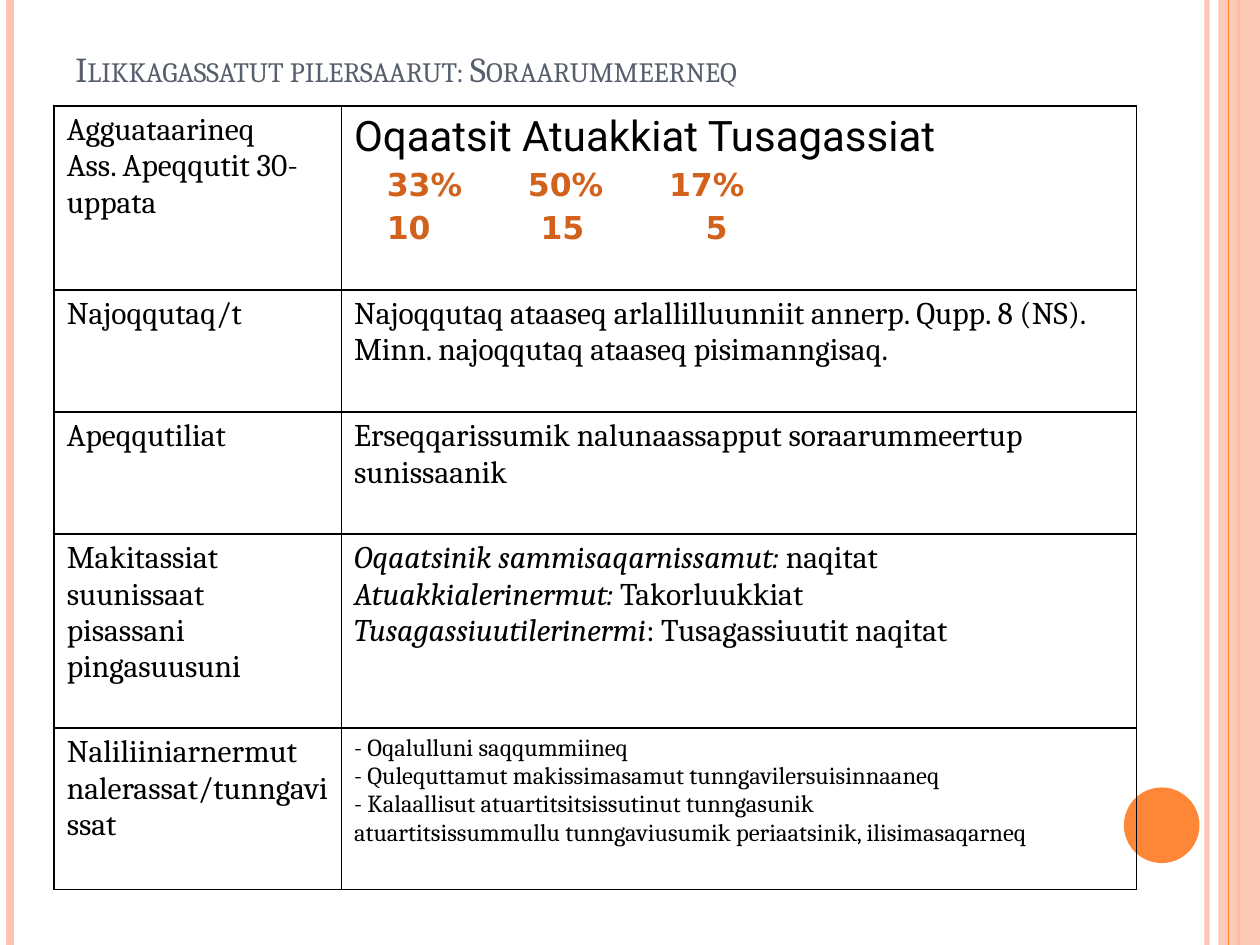
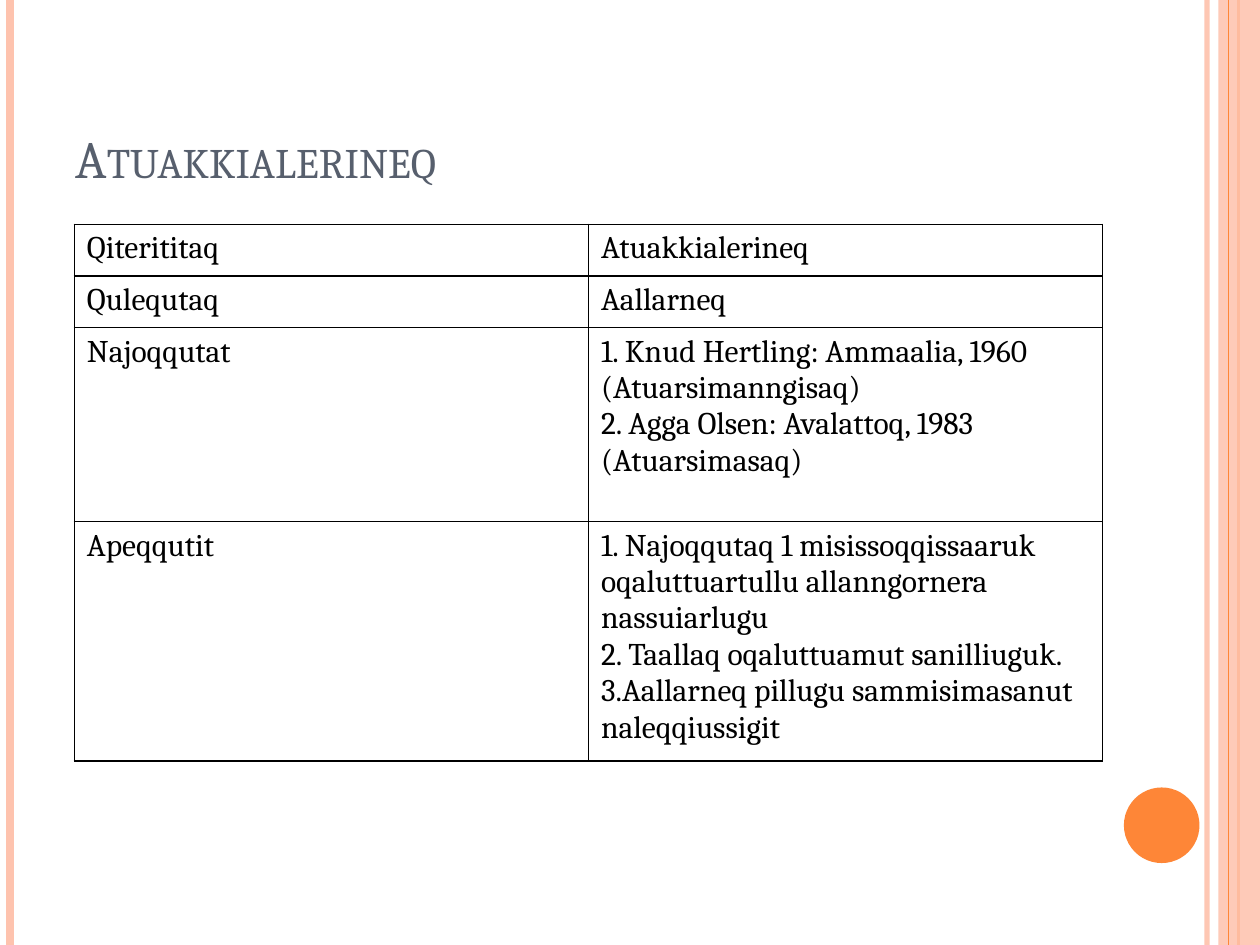
"""Build two slides with a striped frame, a small-caps title and a two-column table each."""
from lxml import etree
from pptx import Presentation
from pptx.dml.color import RGBColor
from pptx.enum.shapes import MSO_CONNECTOR, MSO_SHAPE
from pptx.enum.text import MSO_ANCHOR
from pptx.oxml.ns import qn
from pptx.util import Inches, Pt

STRAIGHT = MSO_CONNECTOR.STRAIGHT
RECTANGLE = MSO_SHAPE.RECTANGLE
OVAL = MSO_SHAPE.OVAL
BOTTOM = MSO_ANCHOR.BOTTOM

PEACH = RGBColor(0xFE, 0xC3, 0xAE)
ORANGE = RGBColor(0xFE, 0x86, 0x37)
SLATE = RGBColor(0x57, 0x5F, 0x6D)
RUST = RGBColor(0xD2, 0x61, 0x1C)
BLACK = RGBColor(0, 0, 0)
BODY_FONT = "Cambria"

WIDTH, HEIGHT = Inches(10), Inches(7.5)
UNIT = WIDTH / 10

STRIPES_BEHIND = [(9.58, PEACH, 3, 93), (0.08, PEACH, 4.5, 100), (9.83, ORANGE, 1.5, 100)]
STRIPES_FRONT = [(9.75, ORANGE, 0.75, 100)]

EXAM_ROWS = [
    ("Agguataarineq\nAss. Apeqqutit 30-uppata",
     "Oqaatsit Atuakkiat Tusagassiat\n\t33%\t50%\t17%\n\t10\t15\t5"),
    ("Najoqqutaq/t",
     "Najoqqutaq ataaseq arlallilluunniit annerp. Qupp. 8 (NS). "
     "Minn. najoqqutaq ataaseq pisimanngisaq."),
    ("Apeqqutiliat", "Erseqqarissumik nalunaassapput soraarummeertup sunissaanik"),
    ("Makitassiat suunissaat pisassani pingasuusuni",
     "Oqaatsinik sammisaqarnissamut: |naqitat\n"
     "Atuakkialerinermut: |Takorluukkiat\n"
     "Tusagassiuutilerinermi|: Tusagassiuutit naqitat"),
    ("Naliliiniarnermut nalerassat/tunngavissat",
     "- Oqalulluni saqqummiineq\n"
     "- Qulequttamut makissimasamut tunngavilersuisinnaaneq\n"
     "- Kalaallisut atuartitsitsissutinut tunngasunik\n"
     "atuartitsissummullu tunngaviusumik periaatsinik, ilisimasaqarneq"),
]
LITERATURE_ROWS = [
    ("Qiterititaq", "Atuakkialerineq"),
    ("Qulequtaq", "Aallarneq"),
    ("Najoqqutat",
     "1. Knud Hertling: Ammaalia, 1960 (Atuarsimanngisaq)\n"
     "2. Agga Olsen: Avalattoq, 1983 (Atuarsimasaq)"),
    ("Apeqqutit",
     "1. Najoqqutaq 1 misissoqqissaaruk oqaluttuartullu allanngornera nassuiarlugu\n"
     "2. Taallaq oqaluttuamut sanilliuguk.\n"
     "3.Aallarneq pillugu sammisimasanut naleqqiussigit"),
]
PAGES = [
    ("Ilikkagassatut pilersaarut: Soraarummeerneq", 20, (0.5, 0.3, 7.89, 0.46),
     (0.43, 0.84), (2.28, 6.31), (1.46, 0.97, 0.97, 1.54, 1.28), EXAM_ROWS),
    ("Atuakkialerineq", 30, (0.5, 0.3, 8.17, 1.25),
     (0.59, 1.78), (4.08, 4.08), (0.41, 0.41, 1.54, 1.83), LITERATURE_ROWS),
]


def grid(*steps):
    return [round(step * UNIT) for step in steps]


def add_stripes(slide, stripes):
    for column, color, weight, opacity in stripes:
        x = round(column * UNIT)
        stripe = slide.shapes.add_connector(STRAIGHT, x, 0, x, HEIGHT)
        stripe.line.color.rgb = color
        stripe.line.width = Pt(weight)
        for color_node in stripe.line._ln.iter(qn("a:srgbClr")):
            etree.SubElement(color_node, qn("a:alpha"), val=str(opacity * 1000))
        etree.SubElement(stripe._element.spPr, qn("a:effectLst"))


presentation = Presentation()
presentation.slide_width, presentation.slide_height = WIDTH, HEIGHT
tables = []

for title, title_size, title_box, table_corner, columns, rows, texts in PAGES:
    slide = presentation.slides.add_slide(presentation.slide_layouts[6])

    add_stripes(slide, STRIPES_BEHIND)
    band = slide.shapes.add_shape(RECTANGLE, *grid(9.67, 0, 0.33, 7.5))
    add_stripes(slide, STRIPES_FRONT)
    disc = slide.shapes.add_shape(OVAL, *grid(8.92, 6.25, 0.6, 0.6))
    for shape, color in ((band, PEACH), (disc, ORANGE)):
        shape.shadow.inherit = False
        shape.fill.solid()
        shape.fill.fore_color.rgb = color
        shape.line.fill.background()
    for color_node in band._element.spPr.iter(qn("a:srgbClr")):
        etree.SubElement(color_node, qn("a:alpha"), val="87000")

    heading = slide.shapes.add_textbox(*grid(*title_box)).text_frame
    heading.word_wrap = True
    heading.vertical_anchor = BOTTOM
    heading.text = title
    run = heading.paragraphs[0].runs[0]
    run.font.name, run.font.size = BODY_FONT, Pt(title_size)
    run.font.color.rgb = SLATE
    run._r.get_or_add_rPr().set("cap", "small")

    table = slide.shapes.add_table(
        len(rows), len(columns), *grid(*table_corner, sum(columns), sum(rows))).table
    tables.append(table)
    table.first_row = table.horz_banding = False
    for column, width in zip(table.columns, grid(*columns)):
        column.width = width
    for row, height, row_texts in zip(table.rows, grid(*rows), texts):
        row.height = height
        for cell, text in zip(row.cells, row_texts):
            cell.fill.background()
            properties = cell._tc.get_or_add_tcPr()
            for position, side in enumerate(("lnL", "lnR", "lnT", "lnB")):
                border = etree.Element(qn(f"a:{side}"), w=str(Pt(1)))
                fill = etree.SubElement(border, qn("a:solidFill"))
                etree.SubElement(fill, qn("a:srgbClr"), val=str(BLACK))
                properties.insert(position, border)
            cell.text_frame.text = text
            for paragraph in cell.text_frame.paragraphs:
                lead, divider, rest = paragraph.text.partition("|")
                paragraph.text = lead
                if divider:
                    paragraph.runs[0].font.italic = True
                    paragraph.add_run().text = rest
                for run in paragraph.runs:
                    run.font.name, run.font.size = BODY_FONT, Pt(18)
                    run.font.color.rgb = BLACK

exam_table = tables[0]
subjects, *figures = exam_table.cell(0, 1).text_frame.paragraphs
subjects.space_before = Pt(4.8)
subjects.runs[0].font.name, subjects.runs[0].font.size = "Roboto", Pt(24)
for paragraph, stops in zip(figures, ((0.26, 1.38, 2.5), (0.26, 1.48, 2.79))):
    paragraph.space_before = Pt(3.6)
    tab_list = etree.SubElement(paragraph._p.get_or_add_pPr(), qn("a:tabLst"))
    for stop in grid(*stops):
        etree.SubElement(tab_list, qn("a:tab"), pos=str(stop), algn="l")
    for run in paragraph.runs:
        run.font.name, run.font.bold = "DejaVu Sans", True
        run.font.color.rgb = RUST
for paragraph in exam_table.cell(4, 1).text_frame.paragraphs:
    paragraph.runs[0].font.size = Pt(14)

presentation.save("out.pptx")
